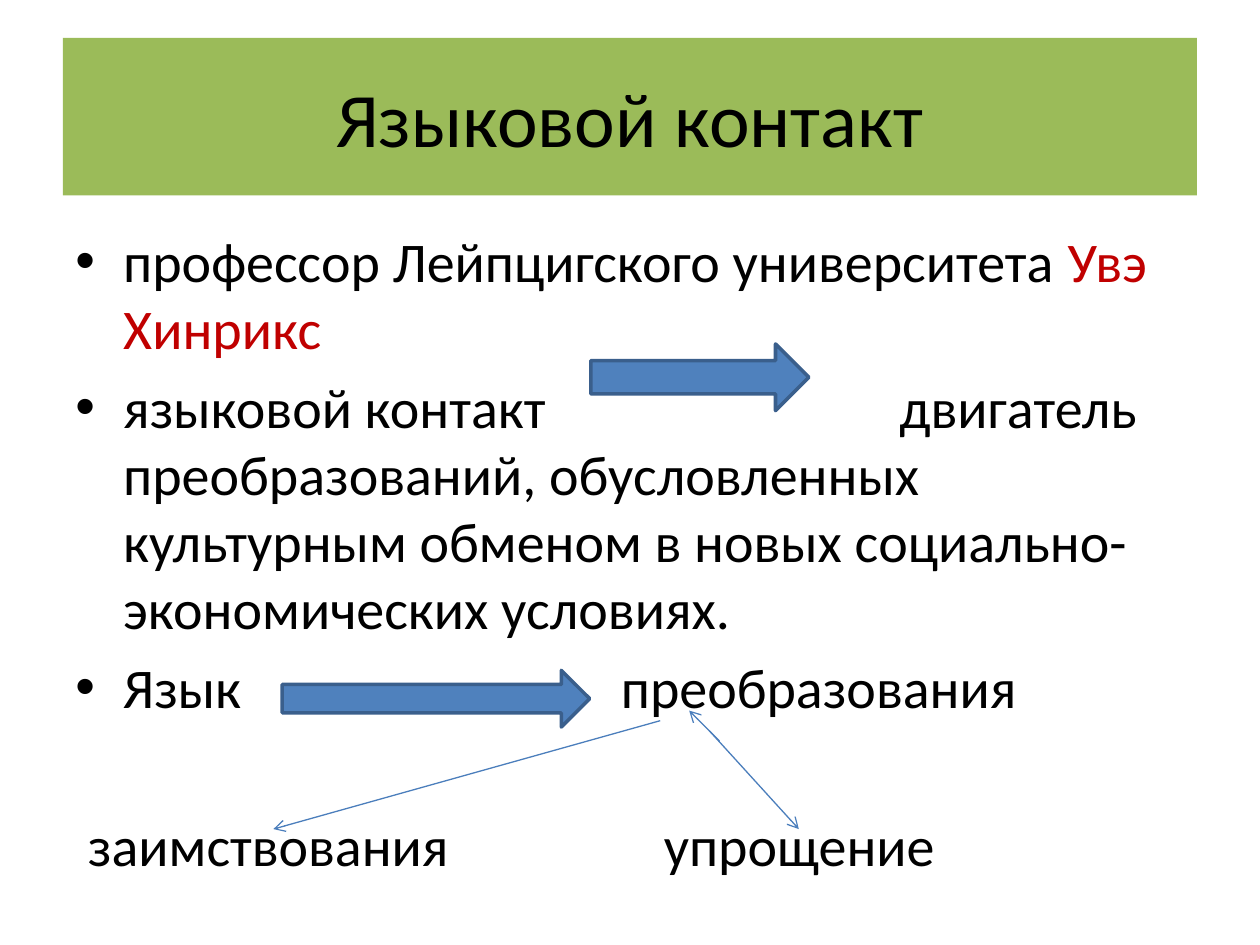
from pptx import Presentation
from pptx.dml.color import RGBColor
from pptx.enum.shapes import MSO_CONNECTOR as Link, MSO_SHAPE as Shape
from pptx.enum.text import MSO_ANCHOR as Anchor, PP_ALIGN as Align
from pptx.oxml.ns import qn
from pptx.util import Inches, Pt
from lxml.etree import SubElement as Sub


def color(code):
    return RGBColor.from_string(code)


class Deck:
    """Holds the style and the current slide, and draws each kind of element."""

    face, ink, red = "Calibri", "000000", "C00000"
    green, blue, edge, wire = "9BBB59", "4F81BD", "3A5F8C", "4B7EBC"

    def __init__(self):
        self.prs = Presentation()
        self.prs.slide_width, self.prs.slide_height = Inches(10), Inches(7.5)
        self.slide = self.prs.slides.add_slide(self.prs.slide_layouts[6])

    def style(self, font, size):
        font.name, font.size = self.face, Pt(size)
        font.color.rgb = color(self.ink)

    def block(self, kind, box, fill):
        shape = self.slide.shapes.add_shape(kind, *map(Inches, box))
        shape.shadow.inherit = False
        shape.fill.solid()
        shape.fill.fore_color.rgb = color(fill)
        return shape

    def title(self, text, box):
        shape = self.block(Shape.RECTANGLE, box, self.green)
        shape.line.fill.background()
        frame = shape.text_frame
        frame.vertical_anchor = Anchor.MIDDLE
        para = frame.paragraphs[0]
        para.text, para.alignment = text, Align.CENTER
        self.style(para.font, 44)
        para.runs[0].font.color.rgb = color(self.ink)

    def body(self, items, box):
        frame = self.slide.shapes.add_textbox(*map(Inches, box)).text_frame
        frame.word_wrap = True
        for i, item in enumerate(items):
            para = frame.add_paragraph() if i else frame.paragraphs[0]
            self.item(para, **item)

    def item(self, para, runs, hang=0.38, stop=None):
        para.space_before = Pt(6.4)
        props = para._p.get_or_add_pPr()
        props.set("marL", str(Inches(hang)))
        props.set("indent", str(-Inches(hang)))
        if hang:
            Sub(props, qn("a:buFont"), typeface="Arial")
            Sub(props, qn("a:buChar"), char="•")
        if stop:
            tabs = Sub(props, qn("a:tabLst"))
            Sub(tabs, qn("a:tab"), pos=str(Inches(stop)), algn="l")
        self.style(para.font, 32)
        for text, code in runs:
            run = para.add_run()
            run.text = text
            run.font.color.rgb = color(code)

    def arrow(self, box):
        shape = self.block(Shape.RIGHT_ARROW, box, self.blue)
        shape.line.color.rgb = color(self.edge)
        shape.line.width = Pt(2)

    def line(self, start, end):
        link = self.slide.shapes.add_connector(
            Link.STRAIGHT, *map(Inches, start + end))
        link.line.color.rgb = color(self.wire)
        link.line.width = Pt(0.75)
        Sub(link.line._get_or_add_ln(), qn("a:tailEnd"), type="arrow")
        Sub(link._element.spPr, qn("a:effectLst"))


def main():
    deck = Deck()
    ink, red = deck.ink, deck.red
    deck.title("Языковой контакт", (0.5, 0.3, 9, 1.25))
    deck.body([
        dict(runs=[("профессор Лейпцигского университета ", ink),
                   ("Увэ Хинрикс", red)]),
        dict(runs=[("языковой контакт\tдвигатель преобразований, "
                    "обусловленных культурным обменом в новых "
                    "социально-экономических условиях.", ink)], stop=6.54),
        dict(runs=[("Язык\tпреобразования", ink)], stop=4.33),
    ], (0.5, 1.75, 9, 4.2))
    for word, left in (("заимствования", 0.6), ("упрощение", 5.17)):
        deck.body([dict(runs=[(word, ink)], hang=0)], (left, 6.38, 3.5, 0.7))
    for box in ((4.69, 2.73, 1.73, 0.53), (2.24, 5.32, 2.44, 0.45)):
        deck.arrow(box)
    for start, end in (((5.63, 5.8), (6.34, 6.58)),
                       ((5.24, 5.72), (2.17, 6.58)),
                       ((5.71, 5.88), (5.47, 5.64))):
        deck.line(start, end)
    deck.prs.save("out.pptx")


if __name__ == "__main__":
    main()
